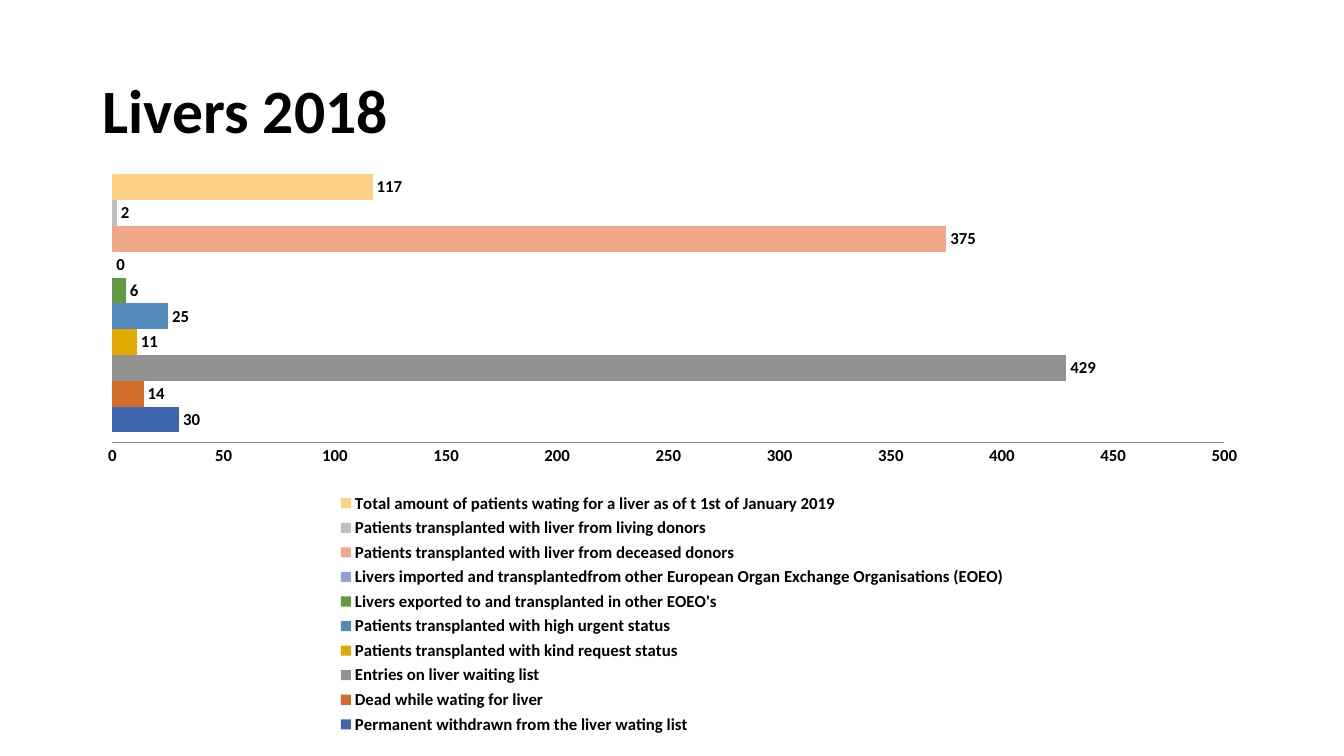
from typing import NamedTuple

from lxml.etree import SubElement
from pptx import Presentation
from pptx.chart.data import CategoryChartData
from pptx.dml.color import RGBColor
from pptx.enum.chart import XL_CHART_TYPE as ChartType
from pptx.enum.chart import XL_LABEL_POSITION as LabelPosition
from pptx.enum.chart import XL_LEGEND_POSITION as LegendPosition
from pptx.enum.chart import XL_TICK_MARK as TickMark
from pptx.enum.text import MSO_ANCHOR as Anchor
from pptx.oxml.ns import qn
from pptx.util import Inches, Pt


class Measure(NamedTuple):
    name: str
    count: int
    color: str


class Area(NamedTuple):
    x: float
    y: float
    w: float
    h: float


# Bars from bottom to top
MEASURES = [
    Measure("Permanent withdrawn from the liver wating list", 30, "3E66AE"),
    Measure("Dead while wating for liver", 14, "D26E2A"),
    Measure("Entries on liver waiting list", 429, "929292"),
    Measure("Patients transplanted with kind request status", 11, "E2AA00"),
    Measure("Patients transplanted with high urgent status", 25, "518ABD"),
    Measure("Livers exported to and transplanted in other EOEO's", 6, "639A3F"),
    Measure("Livers imported and transplantedfrom other European Organ "
            "Exchange Organisations (EOEO)", 0, "90A2D4"),
    Measure("Patients transplanted with liver from deceased donors", 375, "F1A78A"),
    Measure("Patients transplanted with liver from living donors", 2, "BFBFBF"),
    Measure("Total amount of patients wating for a liver as of t 1st of "
            "January 2019", 117, "FFD088"),
]
TITLE_AREA = Area(0.92, 0.4, 11.5, 1.45)
CHART_AREA = Area(0.92, 1.48, 11.5, 5.91)
# Shares of the chart area
PLOT_SHARE = Area(0.017, 0.026, 0.959, 0.466)
LEGEND_SHARE = Area(0.21, 0.57, 0.58, 0.42)


def rgb(color: str) -> RGBColor:
    return RGBColor.from_string(color)


def apply(target, formats: dict) -> None:
    for name, value in formats.items():
        setattr(target, name, value)


def style_font(font, size: float) -> None:
    apply(font, {"name": "Calibri", "size": Pt(size), "bold": True})
    font.color.rgb = rgb("000000")


def set_layout(parent, index: int, share: Area, inner: bool = False) -> None:
    """Place a chart part by shares of the chart area."""
    for old in parent.findall(qn("c:layout")):
        parent.remove(old)
    layout = SubElement(parent, qn("c:layout"))
    parent.insert(index, layout)
    manual = SubElement(layout, qn("c:manualLayout"))
    values = {"layoutTarget": "inner"} if inner else {}
    values |= {"xMode": "edge", "yMode": "edge"}
    values |= {key: str(value) for key, value in share._asdict().items()}
    for tag, value in values.items():
        SubElement(manual, qn(f"c:{tag}")).set("val", value)


def add_title(page, text: str) -> None:
    box = page.shapes.add_textbox(*map(Inches, TITLE_AREA))
    apply(box.text_frame, {"word_wrap": True, "vertical_anchor": Anchor.MIDDLE})
    para = box.text_frame.paragraphs[0]
    para.line_spacing = 0.9
    span = para.add_run()
    span.text = text
    style_font(span.font, 44)


def add_bar_chart(page, measures: list[Measure]) -> None:
    data = CategoryChartData()
    data.categories = ["1"]
    for measure in measures:
        data.add_series(measure.name, [measure.count])
    chart = page.shapes.add_chart(
        ChartType.BAR_CLUSTERED, *map(Inches, CHART_AREA), data).chart
    apply(chart, {"has_title": False, "has_legend": True})
    style_font(chart.font, 12)

    # Bars and their values
    plot = chart.plots[0]
    apply(plot, {"gap_width": 75, "overlap": 0, "vary_by_categories": False,
                 "has_data_labels": True})
    apply(plot.data_labels, {"show_value": True,
                             "position": LabelPosition.OUTSIDE_END})
    style_font(plot.data_labels.font, 12)
    for series, measure in zip(plot.series, measures):
        series.format.fill.solid()
        series.format.fill.fore_color.rgb = rgb(measure.color)

    # Axes
    chart.category_axis.visible = False
    axis = chart.value_axis
    apply(axis, {"minimum_scale": 0, "maximum_scale": 500, "major_unit": 50,
                 "has_major_gridlines": False,
                 "major_tick_mark": TickMark.NONE,
                 "minor_tick_mark": TickMark.NONE})
    axis.format.line.width = Pt(0.75)
    axis.format.line.color.rgb = rgb("898989")

    # Legend and placement
    apply(chart.legend, {"position": LegendPosition.BOTTOM,
                         "include_in_layout": False})
    style_font(chart.legend.font, 12)
    set_layout(next(chart.element.iter(qn("c:plotArea"))), 0, PLOT_SHARE, inner=True)
    set_layout(next(chart.element.iter(qn("c:legend"))), 1, LEGEND_SHARE)


def main() -> None:
    deck = Presentation()
    apply(deck, {"slide_width": Inches(13.33), "slide_height": Inches(7.5)})
    page = deck.slides.add_slide(deck.slide_layouts[6])
    add_title(page, "Livers 2018")
    add_bar_chart(page, MEASURES)
    deck.save("out.pptx")


if __name__ == "__main__":
    main()
